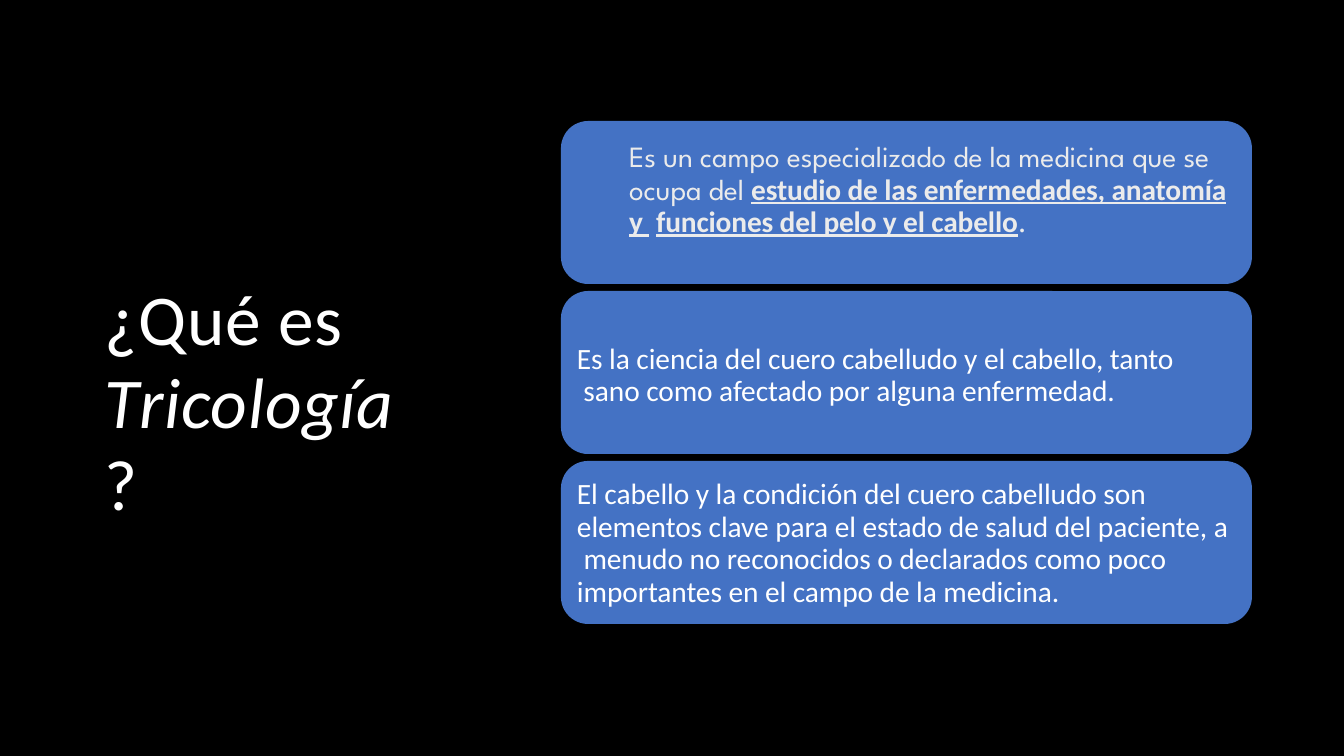
from pptx import Presentation
from pptx.dml.color import RGBColor
from pptx.enum.shapes import MSO_SHAPE
from pptx.enum.text import MSO_ANCHOR, MSO_AUTO_SIZE, PP_ALIGN
from pptx.util import Emu, Pt

ROUNDED = MSO_SHAPE.ROUNDED_RECTANGLE
TOP = MSO_ANCHOR.TOP
LEFT = PP_ALIGN.LEFT
NO_FIT = MSO_AUTO_SIZE.NONE

# Content: each span is (text, style, letter spacing in 1/100 pt)
QUESTION = [
    [("¿Qué es", "question", 50)],
    [("T", "term", -250), ("ri", "term", 20), ("c", "term", 0),
     ("o", "term", 60), ("l", "term", 20), ("o", "term", 60),
     ("gí", "term", 30), ("a", "term", 60), ("?", "question", 50)],
]
DEFINITION = [[
    ("Es un campo especializado de la medicina que se ocupa del ", "lead", -5),
    ("estudio de las enfermedades, anatomía ", "key", -10),
    ("y ", "key", 0),
    (" ", "gap", -460),
    ("funciones del pelo y el cabello", "key", -10),
    (".", "lead", 0),
]]
SCIENCE = [[
    ("Es la ciencia del cuero cabelludo y el cabello, tanto\v"
     " sano como afectado por alguna enfermedad.", "body", -5),
]]
IMPORTANCE = [[
    ("El cabello y la condición del cuero cabelludo son "
     "elementos clave para el estado de salud del paciente, a\v"
     " menudo no reconocidos o declarados como poco "
     "importantes en el campo de la medicina.", "body", -5),
]]

# Style: font, size, colour, bold, italic, underline
STYLES = {
    "question": ("Calibri", 51, "FFFFFF", False, False, False),
    "term": ("Calibri", 51, "FFFFFF", False, True, False),
    "lead": ("League Spartan", 21, "EBEBEB", False, False, False),
    "key": ("Calibri", 21, "EBEBEB", True, False, True),
    "gap": ("Calibri", 21, "EBEBEB", True, False, False),
    "body": ("Calibri", 21, "FFFFFF", False, False, False),
}

# Layout in px
PAGE_WIDTH, PAGE_HEIGHT = 1344, 756
CARD_LEFT, CARD_TOP, CARD_WIDTH, CARD_HEIGHT, CARD_GAP = 561, 121, 691, 163, 7


def px(length):
    return Emu(round(length * 914400 / 100.8))


def color(value):
    return RGBColor.from_string(value)


def write(box, paragraphs, line_spacing, top_inset):
    frame = box.text_frame
    frame.word_wrap = True
    frame.auto_size = NO_FIT
    frame.vertical_anchor = TOP
    frame.margin_left = frame.margin_right = frame.margin_bottom = 0
    frame.margin_top = px(top_inset)
    for index, spans in enumerate(paragraphs):
        para = frame.add_paragraph() if index else frame.paragraphs[0]
        para.alignment = LEFT
        para.line_spacing = line_spacing
        para.space_before = Pt(0)
        for text, style, spacing in spans:
            for number, line in enumerate(text.split("\v")):
                if number:
                    para.add_line_break()
                span = para.add_run()
                span.text = line
                font = span.font
                font.name, size, shade, font.bold, font.italic, font.underline = STYLES[style]
                font.size = Pt(size)
                font.color.rgb = color(shade)
                span._r.get_or_add_rPr().set("spc", str(spacing))


def add_text(page, left, top, width, height):
    return page.shapes.add_textbox(px(left), px(top), px(width), px(height))


def main():
    deck = Presentation()
    deck.slide_width, deck.slide_height = px(PAGE_WIDTH), px(PAGE_HEIGHT)
    page = deck.slides.add_slide(deck.slide_layouts[5])
    page.background.fill.solid()
    page.background.fill.fore_color.rgb = color("000000")

    # Cards
    cards = []
    for row in range(3):
        top = CARD_TOP + row * (CARD_HEIGHT + CARD_GAP)
        card = page.shapes.add_shape(
            ROUNDED, px(CARD_LEFT), px(top), px(CARD_WIDTH), px(CARD_HEIGHT))
        card.shadow.inherit = False
        card.fill.solid()
        card.fill.fore_color.rgb = color("4472C4")
        card.line.fill.background()
        cards.append(card)

    # Definition in the title, in front of the first card
    title = page.shapes.title
    title.left, title.top, title.width, title.height = px(629), px(113), px(604), px(156)
    cards[0].element.addnext(title.element)
    write(title, DEFINITION, 0.93, 28)

    # Question and the other two cards' text
    write(add_text(page, 105, 275, 305, 252), QUESTION, Pt(59.1), 2)
    write(add_text(page, 577, 333, 604, 71), SCIENCE, Pt(23), 10)
    write(add_text(page, 577, 470, 658, 136), IMPORTANCE, 0.93, 8)

    deck.save("out.pptx")


if __name__ == "__main__":
    main()
